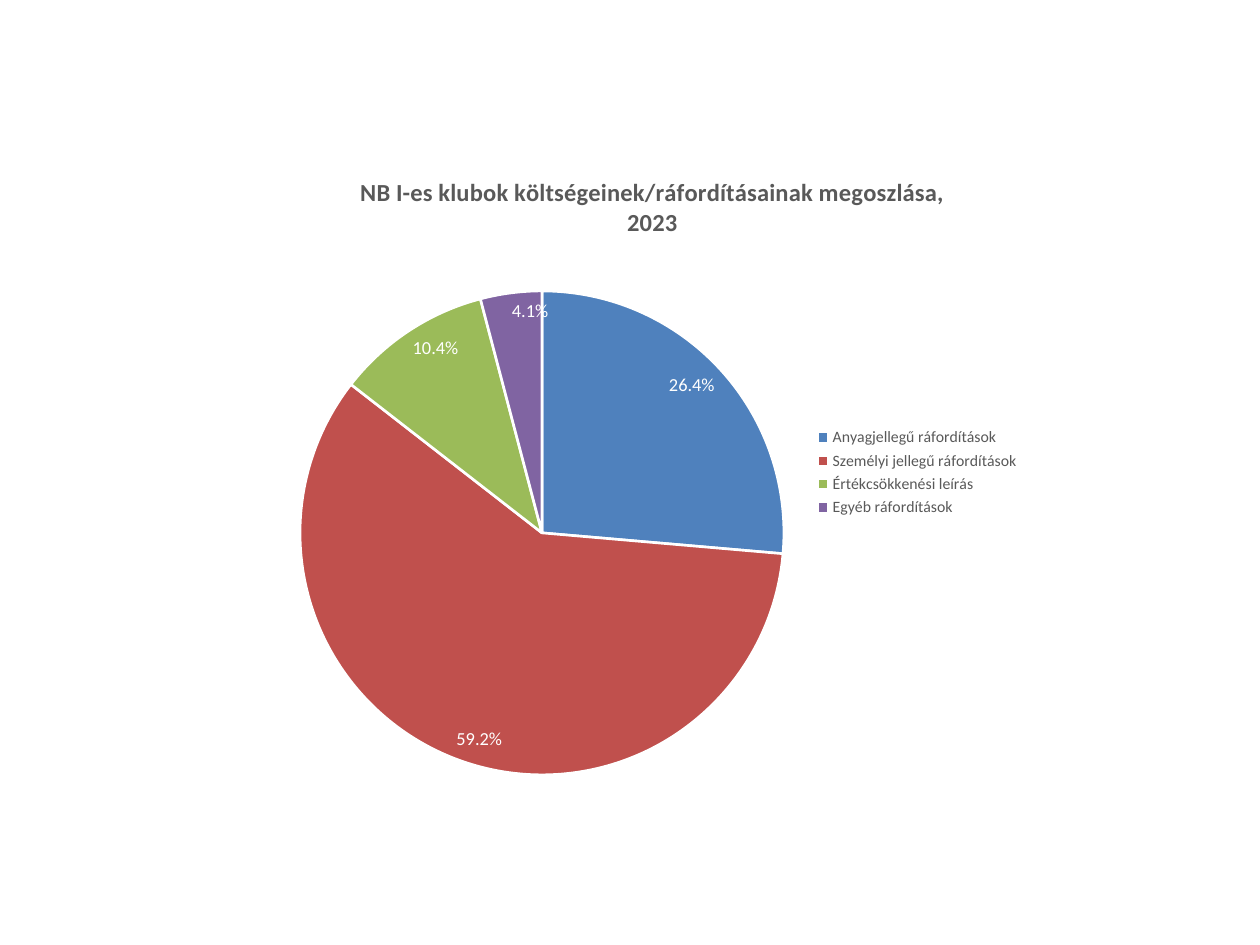
import pptx
import pptx.chart.data
import pptx.dml.color
import pptx.enum.chart
import pptx.oxml
import pptx.oxml.ns
import pptx.util

PX = 914400 / 126
FONT = "Calibri"
COLORS = {
    "text": "595959",
    "white": "FFFFFF",
    "material": "4F81BD",
    "personnel": "C0504D",
    "depreciation": "9BBB59",
    "other": "8064A2",
}
COSTS = [
    ("Anyagjellegű ráfordítások", 0.264, "material"),
    ("Személyi jellegű ráfordítások", 0.592, "personnel"),
    ("Értékcsökkenési leírás", 0.104, "depreciation"),
    ("Egyéb ráfordítások", 0.041, "other"),
]
TITLE = "NB I-es klubok költségeinek/ráfordításainak megoszlása, 2023"


def px(n):
    return pptx.util.Emu(round(n * PX))


def rgb(name):
    return pptx.dml.color.RGBColor.from_string(COLORS[name])


def style_font(font, size, color="text", bold=False):
    font.name = FONT
    font.size = pptx.util.Pt(size)
    font.bold = bold
    font.color.rgb = rgb(color)


def add_text(tf, text, **fmt):
    r = tf.paragraphs[0].add_run()
    r.text = text
    style_font(r.font, **fmt)


def set_plot_box(chart, x, y, w, h, box_w, box_h):
    """Fix the inner plot area, in px relative to the chart's box."""
    area = chart._chartSpace.chart.plotArea
    for old in area.findall(pptx.oxml.ns.qn("c:layout")):
        area.remove(old)
    parts = {"x": x / box_w, "y": y / box_h, "w": w / box_w, "h": h / box_h}
    modes = '<c:layoutTarget val="inner"/><c:xMode val="edge"/><c:yMode val="edge"/>'
    sizes = "".join(f'<c:{k} val="{v:.4f}"/>' for k, v in parts.items())
    area.insert(0, pptx.oxml.parse_xml(
        f'<c:layout {pptx.oxml.ns.nsdecls("c")}><c:manualLayout>'
        f"{modes}{sizes}</c:manualLayout></c:layout>"))


def add_cost_pie(s, x, y, w, h):
    data = pptx.chart.data.CategoryChartData(number_format="0.0%")
    data.categories = [name for name, _, _ in COSTS]
    data.add_series("Series 1", [share for _, share, _ in COSTS])
    chart = s.shapes.add_chart(
        pptx.enum.chart.XL_CHART_TYPE.PIE, px(x), px(y), px(w), px(h), data).chart
    style_font(chart.font, size=10)

    chart.has_title = True
    add_text(chart.chart_title.text_frame, TITLE, size=14, bold=True)
    chart.chart_title.include_in_layout = False

    chart.has_legend = True
    chart.legend.position = pptx.enum.chart.XL_LEGEND_POSITION.RIGHT
    chart.legend.include_in_layout = False
    style_font(chart.legend.font, size=9)

    plot = chart.plots[0]
    plot.vary_by_categories = True
    for i, (_, _, color) in enumerate(COSTS):
        fmt = plot.series[0].points[i].format
        fmt.fill.solid()
        fmt.fill.fore_color.rgb = rgb(color)
        fmt.line.color.rgb = rgb("white")
        fmt.line.width = pptx.util.Pt(1.5)

    plot.has_data_labels = True
    labels = plot.data_labels
    labels.show_value = True
    labels.show_percentage = False
    labels.number_format = "0.0%"
    labels.number_format_is_linked = False
    labels.position = pptx.enum.chart.XL_LABEL_POSITION.INSIDE_END
    style_font(labels.font, size=10.5, color="white")

    set_plot_box(chart, 27, 140, 484, 484, w, h)


def main():
    prs = pptx.Presentation()
    prs.slide_width, prs.slide_height = px(1260), px(945)
    s = prs.slides.add_slide(prs.slide_layouts[6])
    s.background.fill.solid()
    s.background.fill.fore_color.rgb = rgb("white")
    add_cost_pie(s, 273, 151, 759, 643)
    prs.save("out.pptx")


if __name__ == "__main__":
    main()
